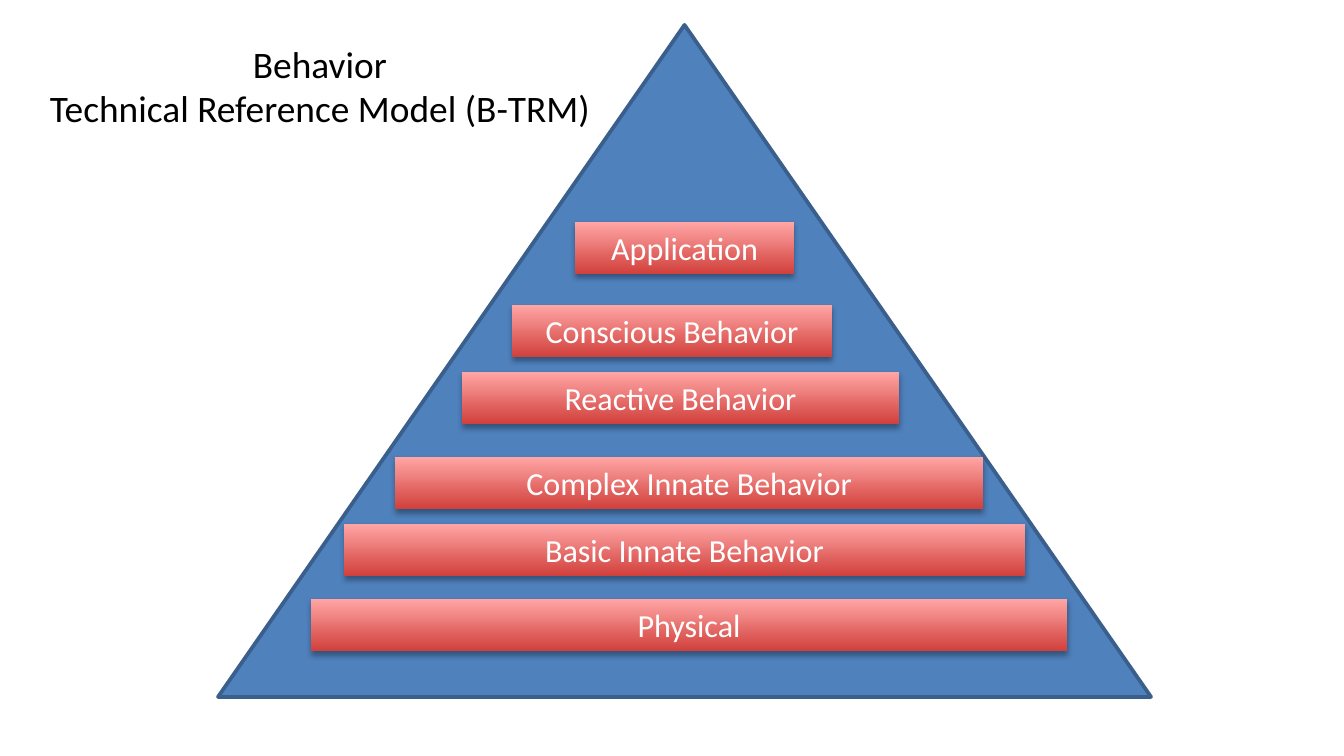
"""Build the Behavior Technical Reference Model pyramid slide."""
from lxml.etree import SubElement
from pptx import Presentation
from pptx.dml.color import RGBColor
from pptx.enum.shapes import MSO_SHAPE
from pptx.enum.text import MSO_ANCHOR, MSO_AUTO_SIZE, PP_ALIGN
from pptx.oxml.ns import qn
from pptx.util import Pt

TITLE = "Behavior\vTechnical Reference Model (B-TRM)"
TITLE_BOX = (-16, 34, 672, 103)
PYRAMID_BOX = (218, 25, 933, 672)
BAR_HEIGHT = 52
LAYERS = [
    ("Physical", 311, 599, 756),
    ("Basic Innate Behavior", 344, 524, 681),
    ("Complex Innate Behavior", 395, 457, 588),
    ("Reactive Behavior", 462, 372, 437),
    ("Conscious Behavior", 512, 305, 320),
    ("Application", 575, 222, 219),
]
COLORS = {
    "pyramid": "4F81BD",
    "edge": "3A5F8C",
    "bar_bottom": "D1403C",
    "bar_top": "FFA6A5",
    "bar_text": "FFFFFF",
    "title": "000000",
    "shadow": "000000",
}
FONT = "Calibri"
EMU_PER_PX = 914400 / 134.4


def px(n):
    return round(n * EMU_PER_PX)


def color(name):
    return RGBColor.from_string(COLORS[name])


def set_text(sp, text, size, color_name, anchor):
    tf = sp.text_frame
    tf.text = text
    tf.word_wrap = True
    tf.auto_size = MSO_AUTO_SIZE.NONE
    tf.vertical_anchor = anchor
    p = tf.paragraphs[0]
    p.alignment = PP_ALIGN.CENTER
    p.font.name = FONT
    p.font.size = Pt(size)
    p.font.color.rgb = color(color_name)


def add_shape(s, kind, box):
    sp = s.shapes.add_shape(kind, *map(px, box))
    sp.shadow.inherit = False
    return sp


def add_shadow(sp):
    effects = sp._element.spPr.find(qn("a:effectLst"))
    shadow = SubElement(effects, qn("a:outerShdw"), blurRad=str(Pt(3.1)),
                        dist=str(Pt(1.8)), dir="5400000", rotWithShape="0")
    rgb = SubElement(shadow, qn("a:srgbClr"), val=COLORS["shadow"])
    SubElement(rgb, qn("a:alpha"), val="35000")


def add_pyramid(s):
    sp = add_shape(s, MSO_SHAPE.ISOSCELES_TRIANGLE, PYRAMID_BOX)
    sp.fill.solid()
    sp.fill.fore_color.rgb = color("pyramid")
    sp.line.color.rgb = color("edge")
    sp.line.width = Pt(2)


def add_bar(s, text, left, top, width):
    sp = add_shape(s, MSO_SHAPE.RECTANGLE, (left, top, width, BAR_HEIGHT))
    sp.fill.gradient()
    sp.fill.gradient_angle = 90
    for stop, name in zip(sp.fill.gradient_stops, ("bar_bottom", "bar_top")):
        stop.color.rgb = color(name)
    sp.line.fill.background()
    add_shadow(sp)
    set_text(sp, text, 17.2, "bar_text", MSO_ANCHOR.MIDDLE)


def main():
    prs = Presentation()
    prs.slide_width, prs.slide_height = px(1344), px(756)
    s = prs.slides.add_slide(prs.slide_layouts[5])
    title = s.shapes.title
    title.left, title.top, title.width, title.height = map(px, TITLE_BOX)
    set_text(title, TITLE, 20, "title", MSO_ANCHOR.TOP)
    add_pyramid(s)
    for layer in LAYERS:
        add_bar(s, *layer)
    prs.save("out.pptx")


if __name__ == "__main__":
    main()
